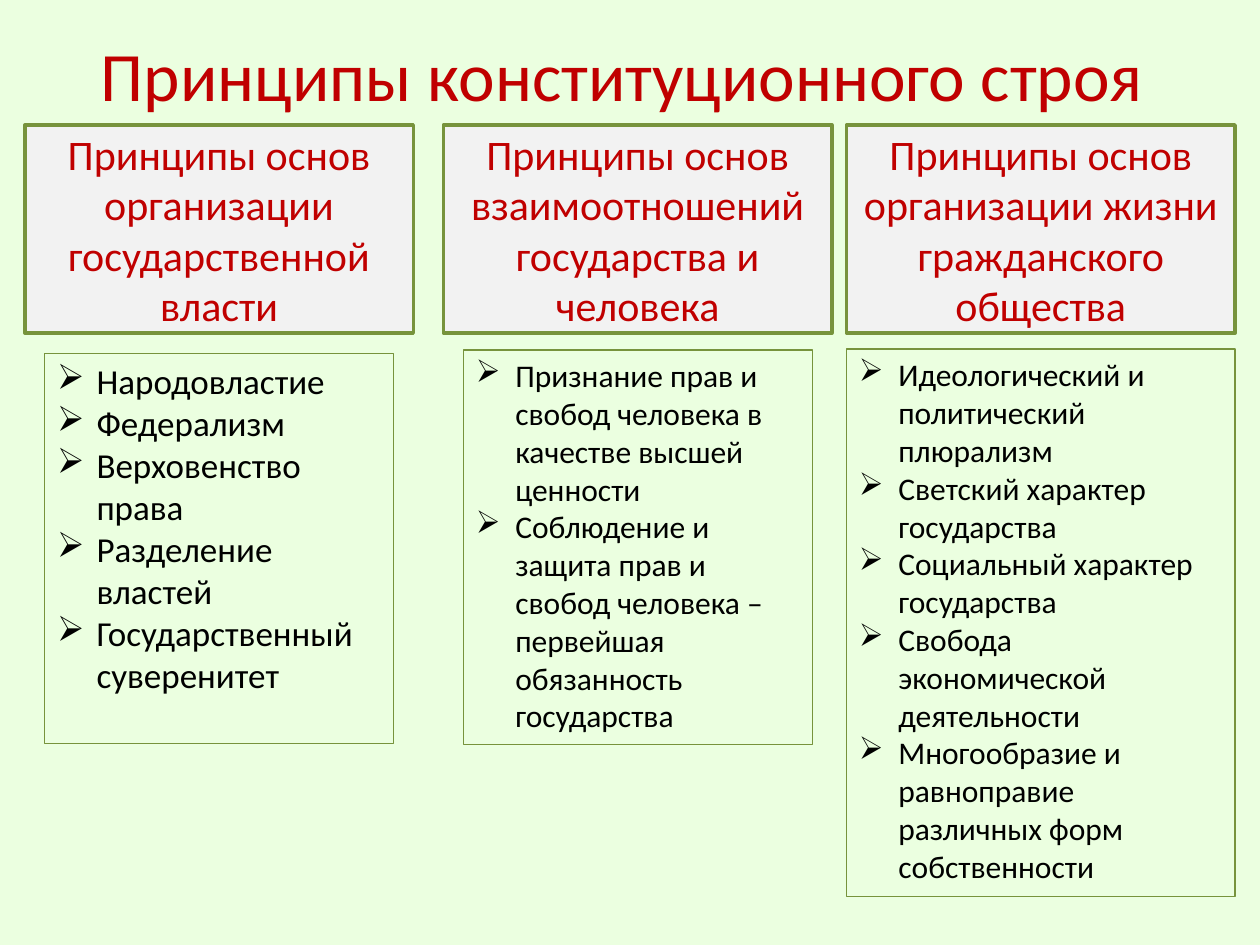
import pptx
import pptx.util
import pptx.dml.color
import pptx.enum.shapes
import pptx.enum.text
import pptx.oxml.ns
from lxml import etree

Pt = pptx.util.Pt
FONT = "Calibri"
COLORS = {
    "background": "EBFFE0",
    "heading": "C00000",
    "header fill": "F2F2F2",
    "border": "77933C",
    "text": "000000",
}
INDENT = 22.5


def color(name):
    return pptx.dml.color.RGBColor.from_string(COLORS[name])


def format_paragraph(paragraph, size, color_name, alignment):
    paragraph.alignment = alignment
    paragraph.font.name = FONT
    paragraph.font.size = Pt(size)
    paragraph.font.color.rgb = color(color_name)


# Presentation and background
presentation = pptx.Presentation()
presentation.slide_width, presentation.slide_height = Pt(720), Pt(540)
slide = presentation.slides.add_slide(presentation.slide_layouts[5])
slide.background.fill.solid()
slide.background.fill.fore_color.rgb = color("background")
center = pptx.enum.text.PP_ALIGN.CENTER
left_aligned = pptx.enum.text.PP_ALIGN.LEFT
middle = pptx.enum.text.MSO_ANCHOR.MIDDLE
fixed_size = pptx.enum.text.MSO_AUTO_SIZE.NONE

# Title
title = slide.shapes.title
title.left, title.top, title.width, title.height = Pt(36), Pt(-2.9), Pt(648), Pt(90)
title.text_frame.text = "Принципы конституционного строя "
title.text_frame.auto_size = fixed_size
title.text_frame.vertical_anchor = middle
format_paragraph(title.text_frame.paragraphs[0], 39.6, "heading", center)

# Columns: header, header left, list box (left, top, width, height), size, items
columns = [
    ("Принципы основ организации государственной власти",
     14.2, (25.6, 202, 199.4, 223), 20,
     ["Народовластие", "Федерализм", "Верховенство права",
      "Разделение властей", "Государственный суверенитет"]),
    ("Принципы основ взаимоотношений государства и человека",
     253.4, (264.9, 200, 199.4, 225.3), 18,
     ["Признание прав и свобод человека в качестве высшей ценности",
      "Соблюдение и защита прав и свобод человека – первейшая "
      "обязанность государства"]),
    ("Принципы основ организации жизни гражданского общества",
     483.8, (483.8, 199.5, 222, 312.7), 18,
     ["Идеологический и политический плюрализм",
      "Светский характер государства",
      "Социальный характер государства",
      "Свобода экономической деятельности",
      "Многообразие и равноправие различных форм собственности"]),
]

for header_text, header_left, list_box, size, items in columns:
    # Column header
    header = slide.shapes.add_shape(
        pptx.enum.shapes.MSO_SHAPE.RECTANGLE,
        Pt(header_left), Pt(71.4), Pt(222), Pt(119))
    header.shadow.inherit = False
    header.fill.solid()
    header.fill.fore_color.rgb = color("header fill")
    header.line.color.rgb = color("border")
    header.line.width = Pt(2)
    header.text_frame.word_wrap = True
    header.text_frame.vertical_anchor = middle
    header.text_frame.text = header_text
    format_paragraph(header.text_frame.paragraphs[0], 24, "heading", center)

    # Bulleted list
    box = slide.shapes.add_textbox(*map(Pt, list_box))
    box.line.color.rgb = color("border")
    box.line.width = Pt(0.75)
    box.text_frame.word_wrap = True
    box.text_frame.auto_size = fixed_size
    box.text_frame.text = "\n".join(items)
    for paragraph in box.text_frame.paragraphs:
        properties = paragraph._p.get_or_add_pPr()
        properties.set("marL", str(Pt(INDENT)))
        properties.set("indent", str(-Pt(INDENT)))
        etree.SubElement(properties, pptx.oxml.ns.qn("a:buFont"), typeface="Wingdings")
        etree.SubElement(properties, pptx.oxml.ns.qn("a:buChar"), char="Ø")
        format_paragraph(paragraph, size, "text", left_aligned)

presentation.save("out.pptx")
